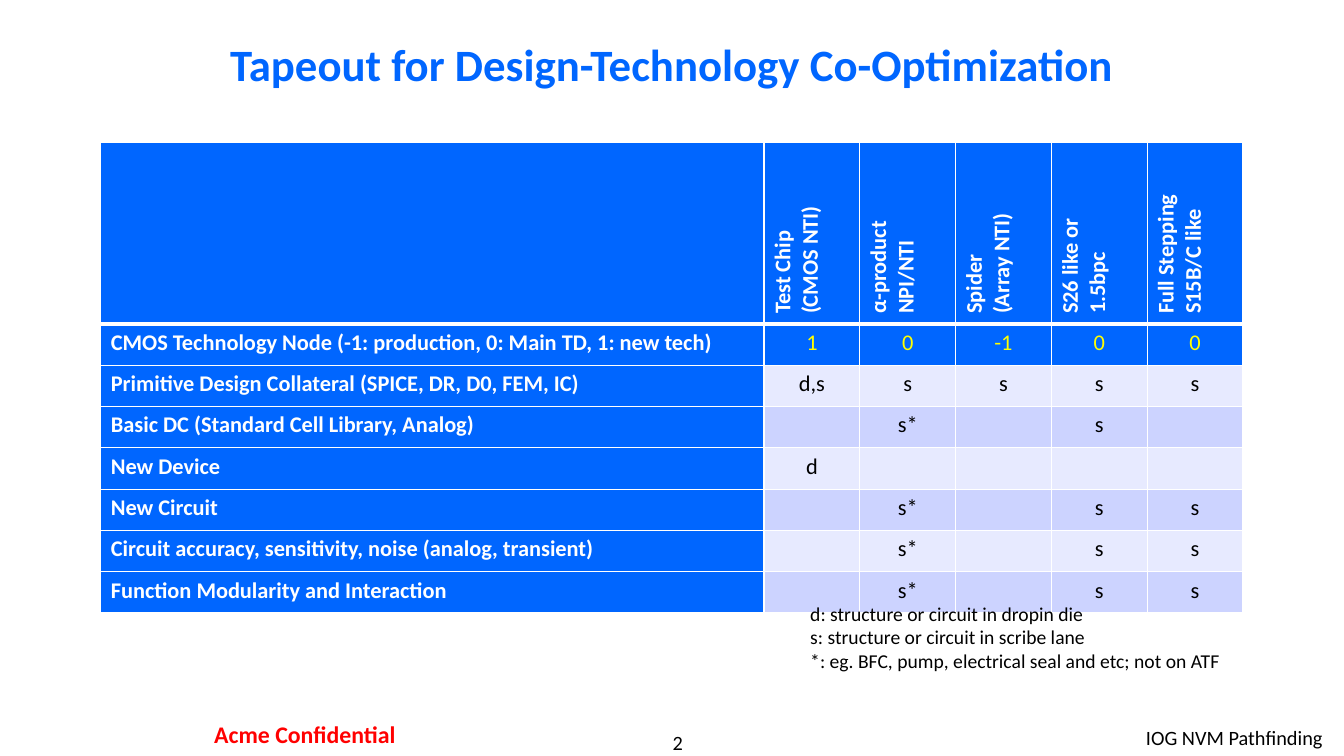
from dataclasses import dataclass

from lxml.etree import SubElement
from pptx import Presentation
from pptx.dml.color import RGBColor
from pptx.enum.text import MSO_ANCHOR, PP_ALIGN
from pptx.oxml.ns import qn
from pptx.slide import Slide
from pptx.table import _Cell
from pptx.text.text import TextFrame
from pptx.util import Pt

BLUE = RGBColor(0x00, 0x66, 0xFF)
LIGHT = RGBColor(0xE7, 0xEA, 0xFF)
MID = RGBColor(0xCC, 0xD3, 0xFF)
WHITE = RGBColor(0xFF, 0xFF, 0xFF)
BLACK = RGBColor(0x00, 0x00, 0x00)
RED = RGBColor(0xFF, 0x00, 0x00)
YELLOW = RGBColor(0xFF, 0xFF, 0x00)


@dataclass(frozen=True)
class TextStyle:
    size: float
    color: RGBColor = BLACK
    bold: bool = False
    align: PP_ALIGN = PP_ALIGN.LEFT


@dataclass(frozen=True)
class Label:
    lines: tuple[str, ...]
    box: tuple[float, float, float, float]
    style: TextStyle
    inset: tuple[float, float] = (7.2, 3.6)
    anchor: MSO_ANCHOR = MSO_ANCHOR.TOP
    wrap: bool = True


@dataclass(frozen=True)
class TableRow:
    name: str
    values: tuple[str, ...]


LABELS = (
    Label(("2",), (400.3, 521.3, 167.8, 17.3),
          TextStyle(14.5, align=PP_ALIGN.CENTER), inset=(0, 0)),
    Label(("IOG NVM Pathfinding",), (635.8, 514.8, 316, 25.2),
          TextStyle(14.5, align=PP_ALIGN.RIGHT)),
    Label(("Acme Confidential",), (111.6, 509.8, 212.4, 29.5),
          TextStyle(17, RED, True, PP_ALIGN.CENTER), inset=(8.6, 4.3)),
    Label(("Tapeout for Design-Technology Co-Optimization",),
          (72, 12.2, 815.8, 66.2),
          TextStyle(32, BLUE, True, PP_ALIGN.CENTER), anchor=MSO_ANCHOR.MIDDLE),
)
LEGEND = Label(
    ("d: structure or circuit in dropin die",
     "s: structure or circuit in scribe lane",
     "*: eg. BFC, pump, electrical seal and etc; not on ATF"),
    (571.7, 426.2, 316, 58.3), TextStyle(14), wrap=False)

VEHICLES = (
    ("Test Chip", "(CMOS NTI)"),
    ("α-product NPI/NTI",),
    ("Spider", "(Array NTI)"),
    ("S26 like or 1.5bpc",),
    ("Full Stepping", "S15B/C like"),
)
ROWS = (
    TableRow("CMOS Technology Node (-1: production, 0: Main TD, 1: new tech)",
             ("1", "0", "-1", "0", "0")),
    TableRow("Primitive Design Collateral (SPICE, DR, D0, FEM, IC)",
             ("d,s", "s", "s", "s", "s")),
    TableRow("Basic DC (Standard Cell Library, Analog)", ("", "s*", "", "s", "")),
    TableRow("New Device", ("d", "", "", "", "")),
    TableRow("New Circuit", ("", "s*", "", "s", "s")),
    TableRow("Circuit accuracy, sensitivity, noise (analog, transient)",
             ("", "s*", "", "s", "s")),
    TableRow("Function Modularity and Interaction", ("", "s*", "", "s", "s")),
)

TABLE_LEFT, TABLE_TOP = 72, 101.5
NAME_WIDTH, VALUE_WIDTH = 473.8, 68.4
HEADER_HEIGHT, ROW_HEIGHT = 113.8, 29.5
HEADING = TextStyle(16, WHITE, True)
NODE = TextStyle(16, YELLOW, align=PP_ALIGN.CENTER)
VALUE = TextStyle(16, align=PP_ALIGN.CENTER)


def write_lines(tf: TextFrame, lines: tuple[str, ...], style: TextStyle) -> None:
    font_values = {"name": "Calibri", "size": Pt(style.size), "bold": style.bold}
    for i, line in enumerate(lines):
        p = tf.add_paragraph() if i else tf.paragraphs[0]
        p.alignment = style.align
        r = p.add_run()
        r.text = line
        for key, value in font_values.items():
            setattr(r.font, key, value)
        r.font.color.rgb = style.color


def add_label(s: Slide, label: Label) -> None:
    tf = s.shapes.add_textbox(*map(Pt, label.box)).text_frame
    side, end = map(Pt, label.inset)
    frame_values = {
        "word_wrap": label.wrap, "vertical_anchor": label.anchor,
        "margin_left": side, "margin_right": side,
        "margin_top": end, "margin_bottom": end,
    }
    for key, value in frame_values.items():
        setattr(tf, key, value)
    write_lines(tf, label.lines, label.style)


def style_cell(cell: _Cell, fill: RGBColor, top: float = 1, bottom: float = 1) -> None:
    """Fill the cell and give it white borders with the given widths."""
    tcPr = cell._tc.get_or_add_tcPr()
    for side, width in {"L": 1, "R": 1, "T": top, "B": bottom}.items():
        ln = SubElement(tcPr, qn(f"a:ln{side}"), w=str(Pt(width)))
        SubElement(SubElement(ln, qn("a:solidFill")), qn("a:srgbClr"), val=str(WHITE))
    cell.fill.solid()
    cell.fill.fore_color.rgb = fill


def add_tapeout_table(s: Slide) -> None:
    columns = len(VEHICLES)
    table = s.shapes.add_table(
        len(ROWS) + 1, columns + 1, Pt(TABLE_LEFT), Pt(TABLE_TOP),
        Pt(NAME_WIDTH + columns * VALUE_WIDTH),
        Pt(HEADER_HEIGHT + len(ROWS) * ROW_HEIGHT)).table
    table.first_row = table.horz_banding = False
    for i, column in enumerate(table.columns):
        column.width = Pt(VALUE_WIDTH if i else NAME_WIDTH)
    for i, row in enumerate(table.rows):
        row.height = Pt(ROW_HEIGHT if i else HEADER_HEIGHT)

    style_cell(table.cell(0, 0), BLUE, bottom=3)
    for c, lines in enumerate(VEHICLES, 1):
        cell = table.cell(0, c)
        style_cell(cell, BLUE, bottom=3)
        cell.vertical_anchor = MSO_ANCHOR.MIDDLE
        cell._tc.get_or_add_tcPr().set("vert", "vert270")
        write_lines(cell.text_frame, lines, HEADING)

    for i, row in enumerate(ROWS, 1):
        is_node = i == 1
        top = 3 if is_node else 1
        band = BLUE if is_node else MID if i % 2 else LIGHT
        name_cell = table.cell(i, 0)
        style_cell(name_cell, BLUE, top=top)
        write_lines(name_cell.text_frame, (row.name,), HEADING)
        for c, value in enumerate(row.values, 1):
            cell = table.cell(i, c)
            style_cell(cell, band, top=top)
            if value:
                write_lines(cell.text_frame, (value,), NODE if is_node else VALUE)


def main() -> None:
    prs = Presentation()
    prs.slide_width, prs.slide_height = Pt(960), Pt(540)
    s = prs.slides.add_slide(prs.slide_layouts[6])
    for label in LABELS:
        add_label(s, label)
    add_tapeout_table(s)
    add_label(s, LEGEND)
    prs.save("out.pptx")


if __name__ == "__main__":
    main()
